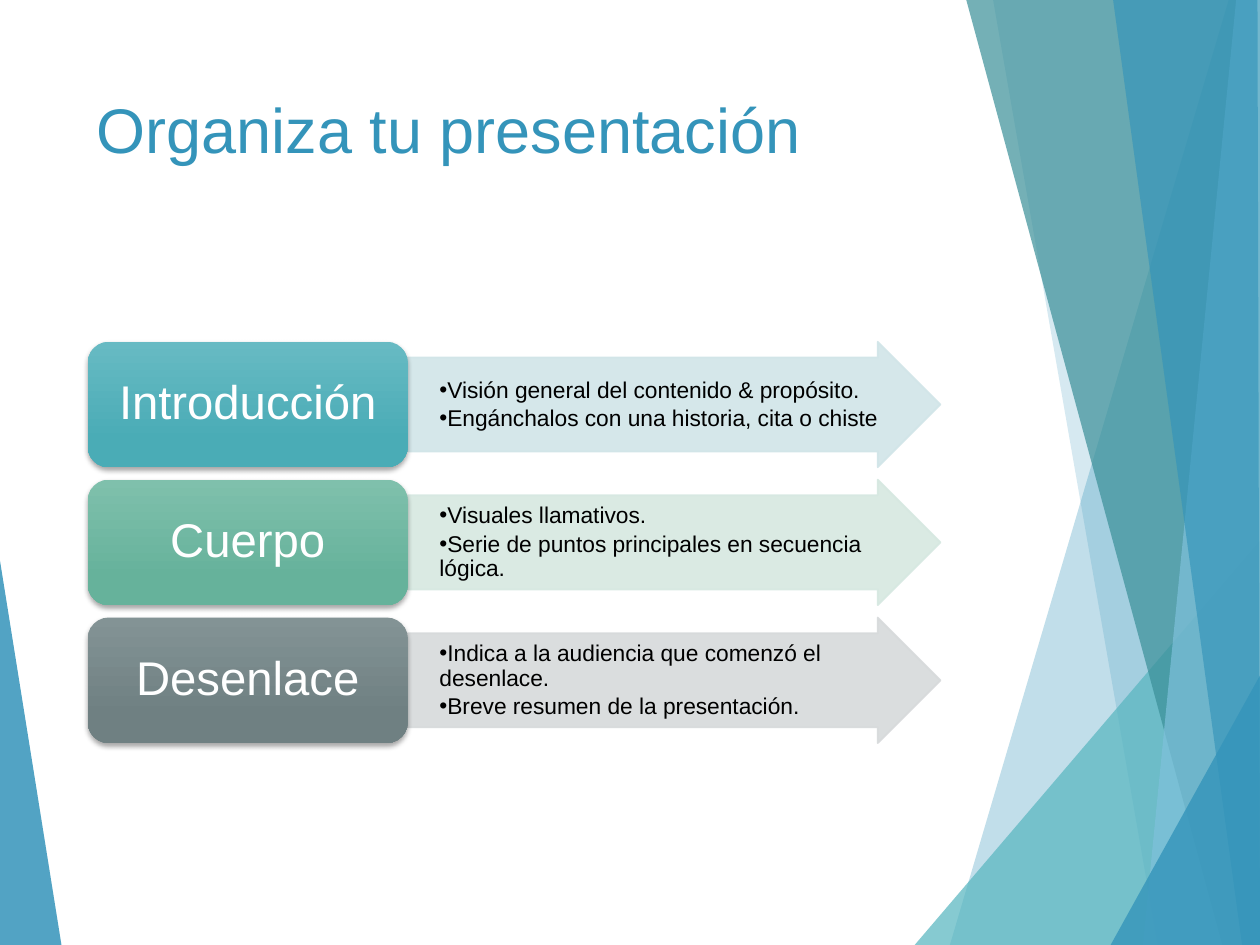
from lxml.etree import SubElement
from pptx import Presentation
from pptx.dml.color import RGBColor
from pptx.enum.shapes import MSO_SHAPE
from pptx.enum.text import MSO_ANCHOR, PP_ALIGN
from pptx.oxml.ns import qn
from pptx.util import Cm, Pt

WIDTH, HEIGHT = 25.4, 19.05
TITLE = "Organiza tu presentación"
STAGES = [
    ("Introducción", ("67BAC3", "4AACB6"), "D1E5E8",
     ["Visión general del contenido & propósito.",
      "Engánchalos con una historia, cita o chiste"]),
    ("Cuerpo", ("7FC0AC", "66B29B"), "D6E8E1",
     ["Visuales llamativos.",
      "Serie de puntos principales en secuencia lógica."]),
    ("Desenlace", ("839395", "6F8082"), "D7DADB",
     ["Indica a la audiencia que comenzó el desenlace.",
      "Breve resumen de la presentación."]),
]
CORNERS = [(WIDTH, HEIGHT), (WIDTH, 0)]
PANELS = [
    ("3494BA", 85, [(0, 11.3), (1.24, HEIGHT), (0, HEIGHT)]),
    ("3494BA", 30, [(24.77, 0), (19.15, HEIGHT), *CORNERS]),
    ("3494BA", 20, [(20.02, 0), (23.34, HEIGHT), *CORNERS]),
    ("58B6C0", 72, [(18.44, HEIGHT), (WIDTH, 10.9), (WIDTH, HEIGHT)]),
    ("3A8F98", 70, [(19.48, 0), (24.64, HEIGHT), *CORNERS]),
    ("7FC1DB", 70, [(24.92, 0), (23.04, HEIGHT), *CORNERS]),
    ("3494BA", 65, [(22.44, 0), (25.04, HEIGHT), (WIDTH, HEIGHT), (25.35, 0)]),
    ("3494BA", 80, [(22.39, HEIGHT), (WIDTH, 13.62), (WIDTH, HEIGHT)]),
]
TITLE_FONT = {"name": "Arial", "size": Pt(36)}
LABEL_FONT = {"name": "Arial", "size": Pt(27)}
POINT_FONT = {"name": "Arial", "size": Pt(13)}
TITLE_FRAME = {"word_wrap": True, "vertical_anchor": MSO_ANCHOR.TOP}
LABEL_FRAME = {"word_wrap": True, "vertical_anchor": MSO_ANCHOR.MIDDLE,
               "margin_left": Cm(0.28), "margin_right": Cm(0.28),
               "margin_top": Cm(0.15), "margin_bottom": Cm(0.15)}
POINT_FRAME = {"word_wrap": True, "vertical_anchor": MSO_ANCHOR.MIDDLE,
               "margin_left": Cm(0.03), "margin_right": Cm(0.03),
               "margin_top": Cm(0.05), "margin_bottom": Cm(0.03)}
LEFT_PARAGRAPH = {"alignment": PP_ALIGN.LEFT}
LABEL_PARAGRAPH = {"alignment": PP_ALIGN.CENTER, "line_spacing": 0.9}
POINT_PARAGRAPH = {"alignment": PP_ALIGN.LEFT, "line_spacing": 0.9,
                   "space_after": Pt(2)}
LABEL_LEFT, LABEL_WIDTH, ARROW_WIDTH = 1.77, 6.45, 10.74
ROW_TOP, ROW_HEIGHT, ROW_STEP = 6.89, 2.53, 2.78


def color(value):
    return RGBColor.from_string(value)


def apply(target, values):
    for name, value in values.items():
        setattr(target, name, value)


def paint(fill, value, opacity):
    fill.solid()
    fill.fore_color.rgb = color(value)
    swatch = fill._xPr.find(qn("a:solidFill")).find(qn("a:srgbClr"))
    SubElement(swatch, qn("a:alpha"), val=str(opacity * 1000))


def write(shape, lines, frame_format, paragraph_format, font_format, ink):
    frame = shape.text_frame
    apply(frame, frame_format)
    for index, line in enumerate(lines):
        para = frame.add_paragraph() if index else frame.paragraphs[0]
        apply(para, paragraph_format)
        span = para.add_run()
        span.text = line
        apply(span.font, font_format)
        span.font.color.rgb = color(ink)


def add_bullets(shape):
    for para in shape.text_frame.paragraphs:
        properties = para._p.get_or_add_pPr()
        properties.set("marL", str(Cm(0.61)))
        properties.set("indent", "0")
        properties.set("lvl", "1")
        SubElement(properties, qn("a:buFont"), typeface="Arial")
        SubElement(properties, qn("a:buChar"), char="•")


def add_shadow(shape):
    shape.shadow.inherit = False
    effects = shape._element.spPr.find(qn("a:effectLst"))
    shadow = SubElement(effects, qn("a:outerShdw"), blurRad=str(Pt(3)),
                        dist=str(Pt(2)), dir="5400000", rotWithShape="0")
    swatch = SubElement(shadow, qn("a:srgbClr"), val="000000")
    SubElement(swatch, qn("a:alpha"), val="35000")


def add_panel(page, value, opacity, points):
    start, *rest = [(Cm(x), Cm(y)) for x, y in points]
    builder = page.shapes.build_freeform(*start)
    builder.add_line_segments(rest, close=True)
    panel = builder.convert_to_shape()
    panel.shadow.inherit = False
    panel.line.fill.background()
    paint(panel.fill, value, opacity)


def add_arrow(page, top, tint, points):
    arrow = page.shapes.add_shape(
        MSO_SHAPE.RIGHT_ARROW, Cm(LABEL_LEFT + LABEL_WIDTH), Cm(top),
        Cm(ARROW_WIDTH), Cm(ROW_HEIGHT))
    arrow.adjustments[0] = 0.75
    arrow.shadow.inherit = False
    arrow.line.width = Pt(1)
    for fill in (arrow.fill, arrow.line.fill):
        paint(fill, tint, 90)
    write(arrow, points, POINT_FRAME, POINT_PARAGRAPH, POINT_FONT, "000000")
    add_bullets(arrow)


def add_label(page, top, shades, name):
    label = page.shapes.add_shape(
        MSO_SHAPE.ROUNDED_RECTANGLE, Cm(LABEL_LEFT), Cm(top),
        Cm(LABEL_WIDTH), Cm(ROW_HEIGHT))
    label.line.fill.background()
    label.fill.gradient()
    label.fill.gradient_angle = 270
    for stop, shade, position in zip(label.fill.gradient_stops, shades, (0, 0.78)):
        stop.color.rgb = color(shade)
        stop.position = position
    add_shadow(label)
    write(label, [name], LABEL_FRAME, LABEL_PARAGRAPH, LABEL_FONT, "FFFFFF")


def main():
    """Build the slide on how to organise a presentation."""
    deck = Presentation()
    deck.slide_width, deck.slide_height = Cm(WIDTH), Cm(HEIGHT)
    page = deck.slides.add_slide(deck.slide_layouts[6])
    for panel in PANELS:
        add_panel(page, *panel)
    title = page.shapes.add_textbox(Cm(1.7), Cm(1.7), Cm(17.63), Cm(3.66))
    write(title, [TITLE], TITLE_FRAME, LEFT_PARAGRAPH, TITLE_FONT, "3494BA")
    for row, (name, shades, tint, points) in enumerate(STAGES):
        top = ROW_TOP + row * ROW_STEP
        add_arrow(page, top, tint, points)
        add_label(page, top, shades, name)
    deck.save("out.pptx")


if __name__ == "__main__":
    main()
